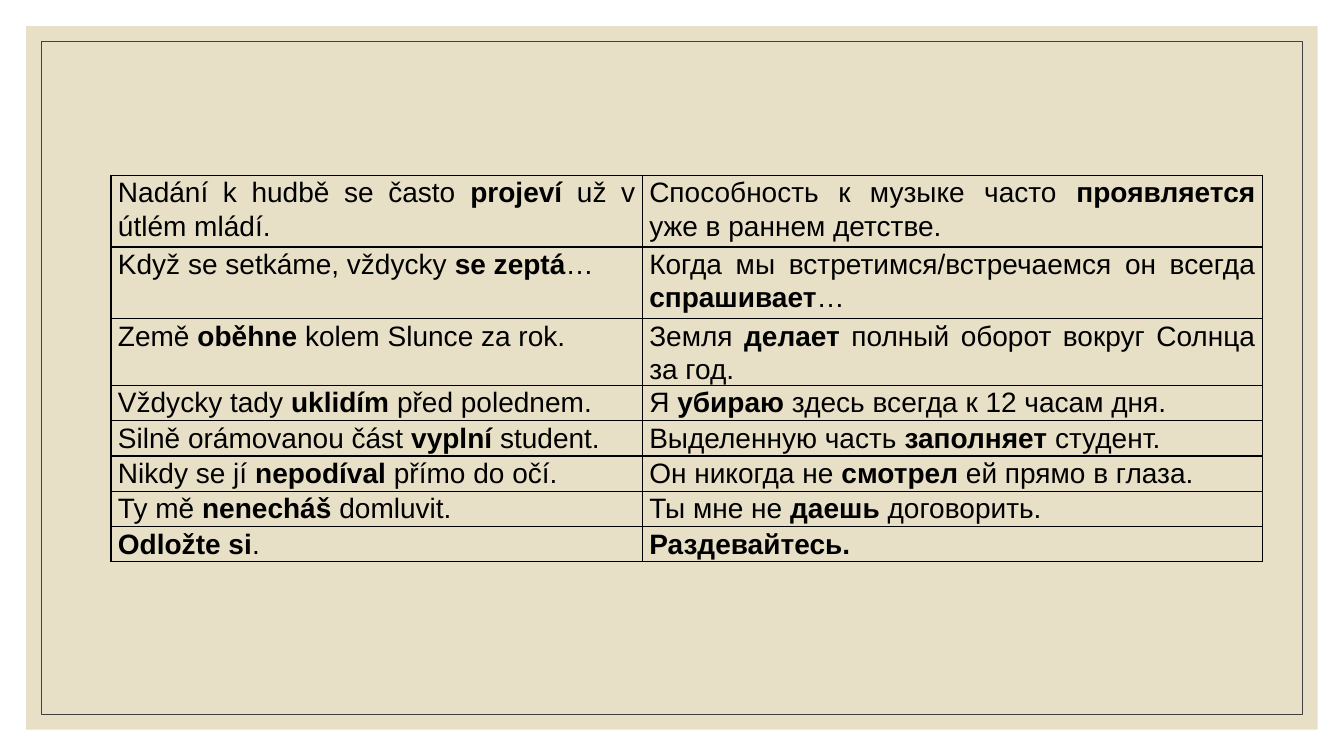
from typing import NamedTuple

from lxml import etree
from pptx import Presentation
from pptx.dml.color import RGBColor
from pptx.enum.shapes import MSO_SHAPE
from pptx.enum.text import PP_ALIGN
from pptx.oxml.ns import qn
from pptx.util import Inches, Pt

RECTANGLE = MSO_SHAPE.RECTANGLE
JUSTIFY = PP_ALIGN.JUSTIFY

SLIDE_WIDTH = 13.33
SLIDE_HEIGHT = 7.5
SAND = "E7E0C7"
FRAME_GRAY = "404040"
BLACK = "000000"
FONT_NAME = "Arial"
TABLE_LEFT, TABLE_TOP = 1.1, 1.74
COLUMN_WIDTHS = (5.27, 6.15)
ROW_HEIGHTS = (0.71,) * 2 + (0.35,) * 6


class Panel(NamedTuple):
    margin: float
    fill: str | None
    line: str | None


class Phrase(NamedTuple):
    before: str
    verb: str
    after: str


PANELS = (Panel(0.26, SAND, None), Panel(0.41, None, FRAME_GRAY))

TRANSLATIONS = (
    (Phrase("Nadání k hudbě se často ", "projeví", " už v útlém mládí."),
     Phrase("Способность к музыке часто ", "проявляется", " уже в раннем детстве.")),
    (Phrase("Když se setkáme, vždycky ", "se zeptá", "…"),
     Phrase("Когда мы встретимся/встречаемся он всегда ", "спрашивает", "…")),
    (Phrase("Země ", "oběhne", " kolem Slunce za rok."),
     Phrase("Земля ", "делает", " полный оборот вокруг Солнца за год.")),
    (Phrase("Vždycky tady ", "uklidím", " před polednem."),
     Phrase("Я ", "убираю", " здесь всегда к 12 часам дня.")),
    (Phrase("Silně orámovanou část ", "vyplní", " student."),
     Phrase("Выделенную часть ", "заполняет", " студент.")),
    (Phrase("Nikdy se jí ", "nepodíval", " přímo do očí."),
     Phrase("Он никогда не ", "смотрел", " ей прямо в глаза.")),
    (Phrase("Ty mě ", "nenecháš", " domluvit."),
     Phrase("Ты мне не ", "даешь", " договорить.")),
    (Phrase("", "Odložte si", "."),
     Phrase("", "Раздевайтесь.", "")),
)


def color(value: str) -> RGBColor:
    return RGBColor.from_string(value)


def add_panel(slide, panel: Panel) -> None:
    shape = slide.shapes.add_shape(
        RECTANGLE,
        Inches(panel.margin),
        Inches(panel.margin),
        Inches(SLIDE_WIDTH - 2 * panel.margin),
        Inches(SLIDE_HEIGHT - 2 * panel.margin),
    )
    shape.shadow.inherit = False
    if panel.fill:
        shape.fill.solid()
        shape.fill.fore_color.rgb = color(panel.fill)
    else:
        shape.fill.background()
    if panel.line:
        shape.line.color.rgb = color(panel.line)
        shape.line.width = Pt(0.5)
    else:
        shape.line.fill.background()


def add_borders(cell) -> None:
    properties = cell._tc.get_or_add_tcPr()
    for position, side in enumerate(("a:lnL", "a:lnR", "a:lnT", "a:lnB")):
        border = etree.Element(qn(side), w=str(Pt(1)))
        fill = etree.SubElement(border, qn("a:solidFill"))
        etree.SubElement(fill, qn("a:srgbClr"), val=BLACK)
        properties.insert(position, border)


def fill_cell(cell, phrase: Phrase) -> None:
    cell.fill.background()
    cell.margin_left = cell.margin_right = Inches(0.07)
    cell.margin_top = cell.margin_bottom = Inches(0)
    add_borders(cell)
    paragraph = cell.text_frame.paragraphs[0]
    paragraph.alignment = JUSTIFY
    paragraph.line_spacing = 1.07
    paragraph.font.name = FONT_NAME
    paragraph.font.size = Pt(20)
    paragraph.font.color.rgb = color(BLACK)
    for text, bold in zip(phrase, (False, True, False)):
        if text:
            run = paragraph.add_run()
            run.text = text
            run.font.bold = bold


def add_translation_table(slide) -> None:
    table = slide.shapes.add_table(
        len(TRANSLATIONS),
        len(COLUMN_WIDTHS),
        Inches(TABLE_LEFT),
        Inches(TABLE_TOP),
        Inches(sum(COLUMN_WIDTHS)),
        Inches(sum(ROW_HEIGHTS)),
    ).table
    table.first_row = False
    table.horz_banding = False
    for column, width in zip(table.columns, COLUMN_WIDTHS):
        column.width = Inches(width)
    for row, height, phrases in zip(table.rows, ROW_HEIGHTS, TRANSLATIONS):
        row.height = Inches(height)
        for cell, phrase in zip(row.cells, phrases):
            fill_cell(cell, phrase)


def main() -> None:
    presentation = Presentation()
    presentation.slide_width = Inches(SLIDE_WIDTH)
    presentation.slide_height = Inches(SLIDE_HEIGHT)
    slide = presentation.slides.add_slide(presentation.slide_layouts[6])
    for panel in PANELS:
        add_panel(slide, panel)
    add_translation_table(slide)
    presentation.save("out.pptx")


if __name__ == "__main__":
    main()
